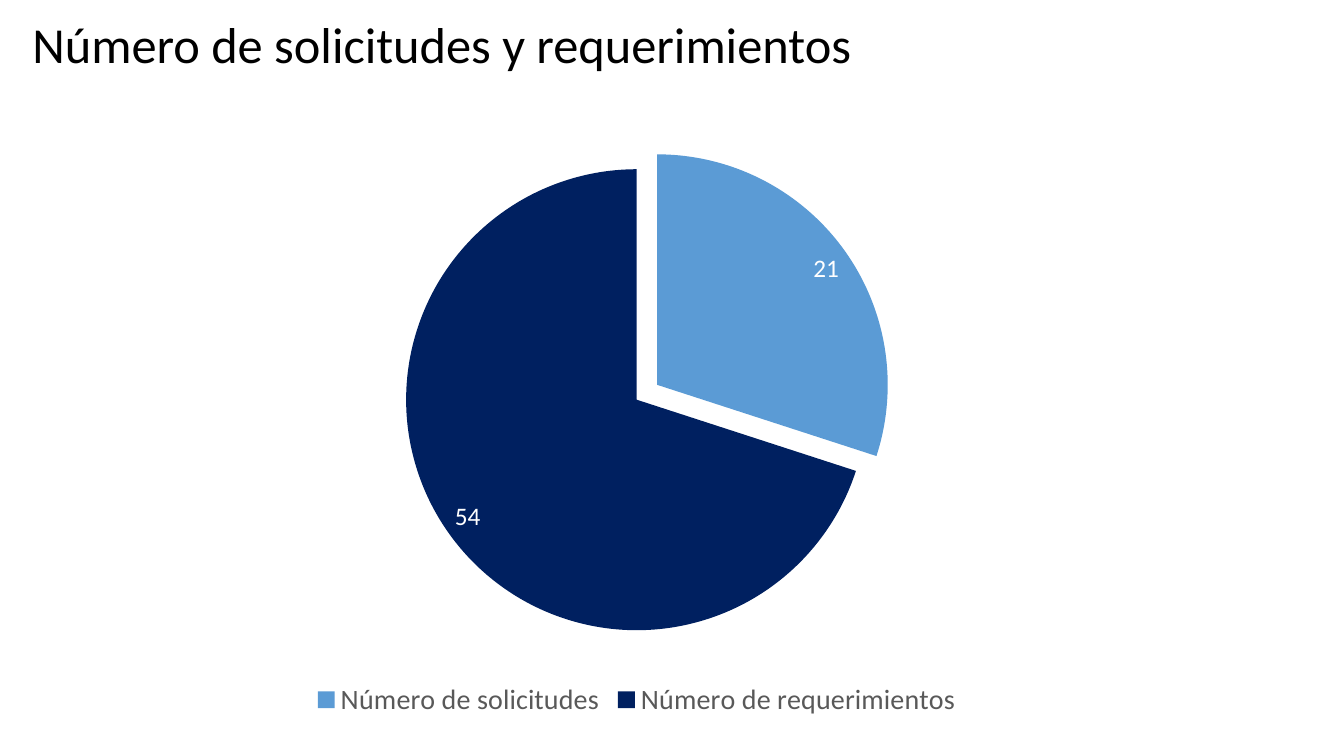
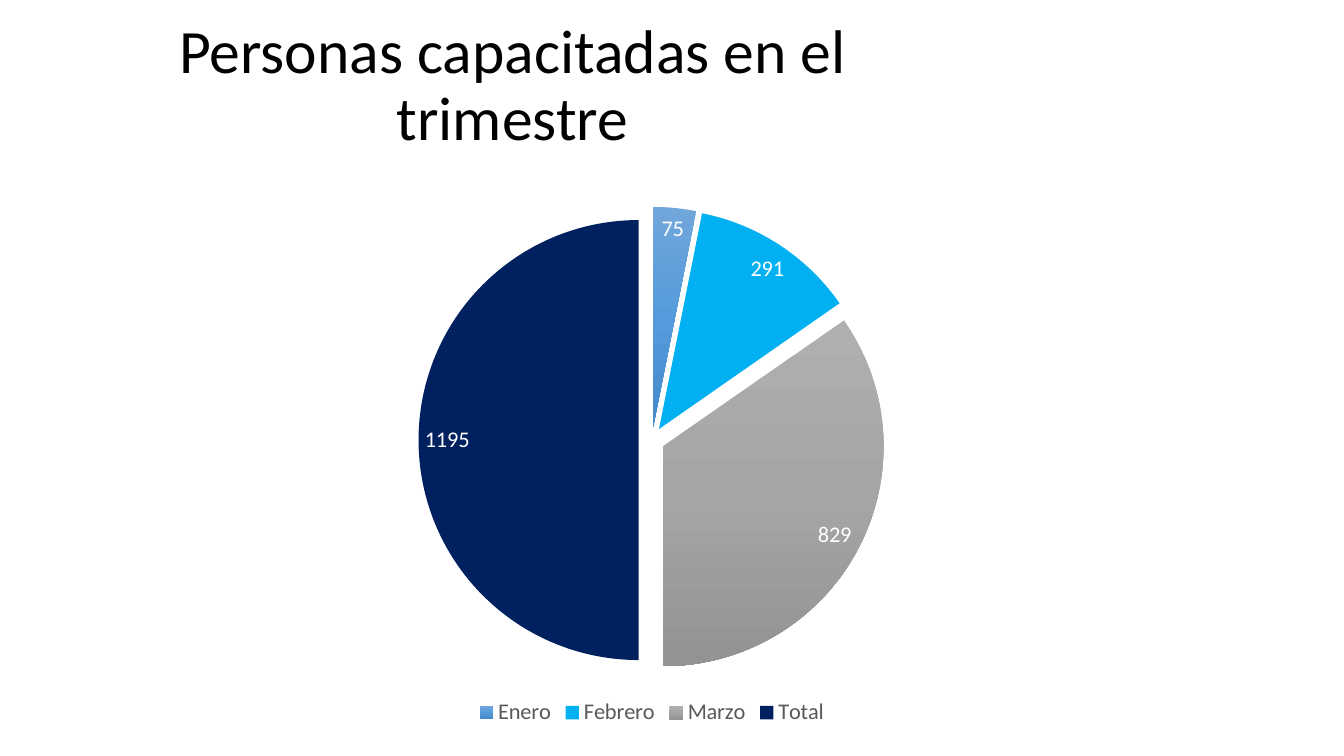
from copy import deepcopy

from lxml.etree import SubElement
from pptx import Presentation
from pptx.chart.data import CategoryChartData
from pptx.dml.color import RGBColor
from pptx.enum.chart import XL_CHART_TYPE, XL_LABEL_POSITION, XL_LEGEND_POSITION
from pptx.enum.text import MSO_ANCHOR, PP_ALIGN
from pptx.oxml.ns import qn
from pptx.util import Inches, Pt

FONT = "Calibri"
BLACK, WHITE, GREY = "000000", "FFFFFF", "595959"
BLUE, SKY, NAVY = "5B9BD5", "00B0F0", "002060"
BLUE_SHADES = ("71A6DB", "559BDB", "448ACA")
GREY_SHADES = ("AFAFAF", "A5A5A5", "939393")


def color(code):
    """Turn a hex string into a colour."""
    return RGBColor.from_string(code)


def style_font(font, size, code):
    """Apply the shared typeface with a size and a colour."""
    font.name = FONT
    font.size = Pt(size)
    font.color.rgb = color(code)


def add_title(page, box, text, size, anchor=MSO_ANCHOR.TOP, spacing=1.0):
    """Place a centred title in the given box."""
    frame = page.shapes.add_textbox(*map(Inches, box)).text_frame
    frame.word_wrap = True
    frame.vertical_anchor = anchor
    para = frame.paragraphs[0]
    para.alignment = PP_ALIGN.CENTER
    para.line_spacing = spacing
    span = para.add_run()
    span.text = text
    style_font(span.font, size, BLACK)


def fill_slice(fill, paint, stop_list):
    """Fill a slice with one colour, or with evenly spaced shades from the top."""
    if isinstance(paint, str):
        fill.solid()
        fill.fore_color.rgb = color(paint)
        return
    fill.gradient()
    fill.gradient_angle = 270
    stops = stop_list()
    while len(stops) < len(paint):
        stops.append(deepcopy(stops[0]))
    for index, (stop, shade) in enumerate(zip(fill.gradient_stops, paint)):
        stop.position = index / (len(paint) - 1)
        stop.color.rgb = color(shade)


def add_pie(page, box, slices, legend_size, label_size, position):
    """Draw a pie from slices of name, value, paint, explosion and label text."""
    data = CategoryChartData()
    data.categories = [item[0] for item in slices]
    data.add_series("Series 1", [item[1] for item in slices])
    chart = page.shapes.add_chart(
        XL_CHART_TYPE.PIE, *map(Inches, box), data).chart
    style_font(chart.font, legend_size, BLACK)
    chart.has_title = False
    chart.has_legend = True
    chart.legend.position = XL_LEGEND_POSITION.BOTTOM
    chart.legend.include_in_layout = False
    style_font(chart.legend.font, legend_size, GREY)

    plot = chart.plots[0]
    plot.vary_by_categories = True
    series = plot.series[0]
    labels = series.data_labels
    labels.show_value = True
    labels.position = position
    style_font(labels.font, label_size, WHITE)

    for index, (_, _, paint, explosion, text) in enumerate(slices):
        point = series.points[index]
        fill = point.format.fill
        element = series._element.findall(qn("c:dPt"))[index]
        fill_slice(fill, paint, lambda: element.find(".//" + qn("a:gsLst")))
        point.format.line.fill.background()
        if explosion:
            offset = SubElement(element, qn("c:explosion"), val=str(explosion))
            element.find(qn("c:spPr")).addprevious(offset)
        if text:
            span = point.data_label.text_frame.paragraphs[0].add_run()
            span.text = text
            style_font(span.font, label_size, WHITE)
            point.data_label.position = position


def build_requests(page):
    """Compare requests with requirements."""
    add_title(page, (0, 0.08, 8.77, 0.71),
              "Número de solicitudes y requerimientos", 36)
    slices = [("Número de solicitudes", 30, BLUE, 11, "21"),
              ("Número de requerimientos", 70, NAVY, 0, "54")]
    add_pie(page, (1, 1.29, 10.63, 5.88), slices, 20, 18,
            XL_LABEL_POSITION.INSIDE_END)


def build_training(page):
    """Show the people trained each month and in total."""
    add_title(page, (0.56, 0.14, 9.05, 1.45),
              "Personas capacitadas en el trimestre", 44,
              MSO_ANCHOR.MIDDLE, 0.9)
    months = [("Enero", 75, BLUE_SHADES), ("Febrero", 291, SKY),
              ("Marzo", 829, GREY_SHADES), ("Total", 1195, NAVY)]
    slices = [(*month, 6, None) for month in months]
    add_pie(page, (1.05, 1.59, 10.83, 5.66), slices, 16, 16,
            XL_LABEL_POSITION.BEST_FIT)


def main():
    """Build and save the deck."""
    deck = Presentation()
    deck.slide_width, deck.slide_height = Inches(13.33), Inches(7.5)
    for build in (build_requests, build_training):
        build(deck.slides.add_slide(deck.slide_layouts[6]))
    deck.save("out.pptx")


if __name__ == "__main__":
    main()
